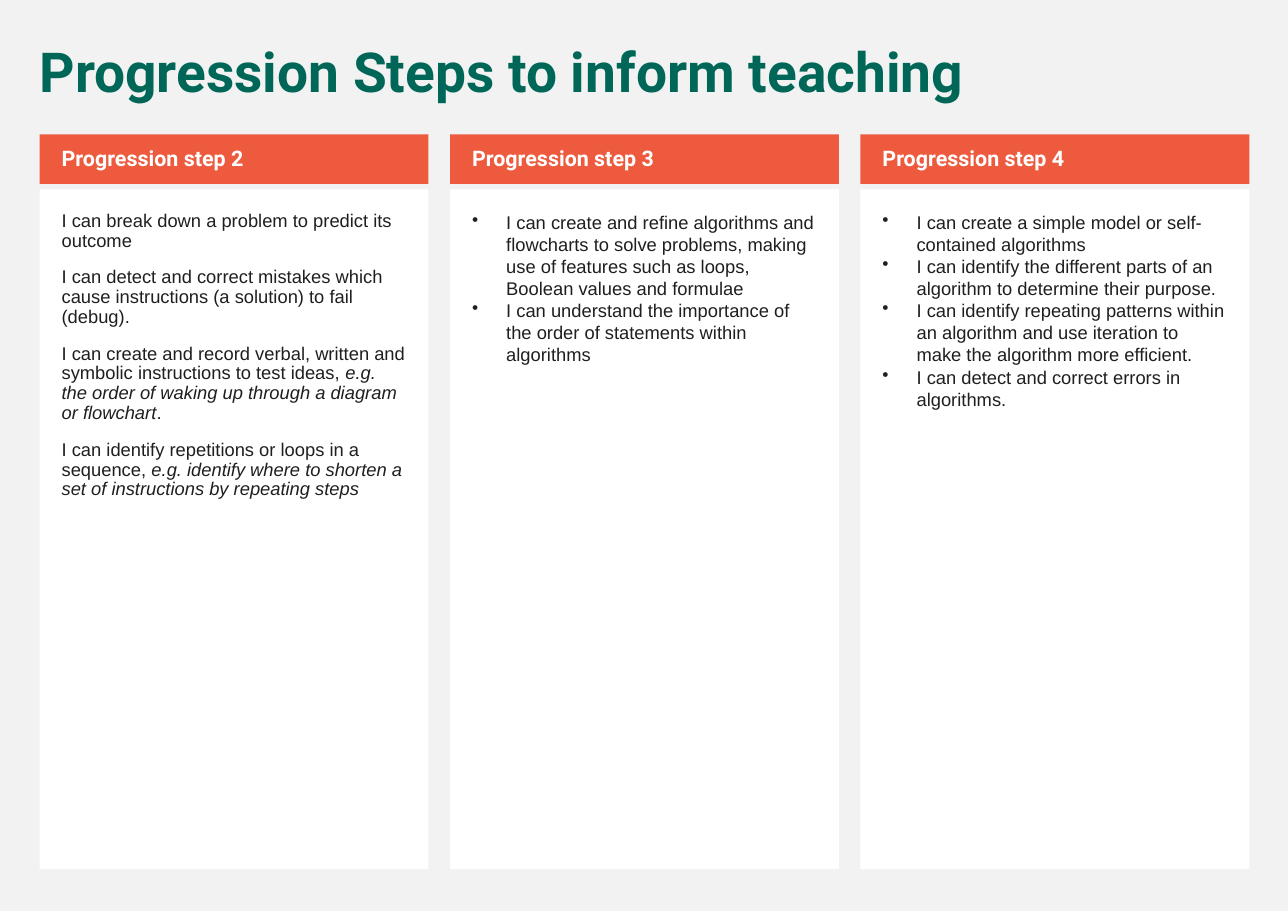
from pptx import Presentation
from pptx.dml.color import RGBColor
from pptx.enum.shapes import MSO_SHAPE as Shape
from pptx.enum.text import MSO_ANCHOR as Anchor, PP_ALIGN as Align
from pptx.oxml.ns import qn
from pptx.util import Inches, Pt
from lxml.etree import SubElement

GREEN, ORANGE, WHITE, DARK, GREY = "006758", "ED5A3E", "FFFFFF", "1F1F1F", "F2F2F2"
FIRST_LEFT, LAST_LEFT, COLUMN_WIDTH = 0.36, 7.81, 3.53

# Each statement is a list of runs; every second run is italic.
COLUMNS = [
    ("Progression step 2", False, [
        ["I can break down a problem to predict its outcome"],
        ["I can detect and correct mistakes which cause instructions (a solution) to fail (debug)."],
        ["I can create and record verbal, written and symbolic instructions to test ideas, ",
         "e.g. the order of waking up through a diagram or flowchart", "."],
        ["I can identify repetitions or loops in a sequence, ",
         "e.g. identify where to shorten a set of instructions by repeating steps"],
    ]),
    ("Progression step 3", True, [
        ["I can create and refine algorithms and flowcharts to solve problems, "
         "making use of features such as loops, Boolean values and formulae"],
        ["I can understand the importance of the order of statements within algorithms"],
    ]),
    ("Progression step 4", True, [
        ["I can create a simple model or self-contained algorithms"],
        ["I can identify the different parts of an algorithm to determine their purpose."],
        ["I can identify repeating patterns within an algorithm and use iteration "
         "to make the algorithm more efficient."],
        ["I can detect and correct errors in algorithms."],
    ]),
]


def set_color(color_format, value):
    color_format.rgb = RGBColor.from_string(value)


def style_paragraph(paragraph, font_name, size, color, bold=False):
    paragraph.alignment = Align.LEFT
    font = paragraph.font
    font.name, font.size, font.bold = font_name, Pt(size), bold
    set_color(font.color, color)


def space_paragraph(paragraph):
    paragraph.line_spacing = 0.9
    paragraph.space_before = Pt(11)


def add_bullet(paragraph):
    properties = paragraph._p.get_or_add_pPr()
    properties.set("marL", str(Inches(0.31)))
    properties.set("indent", str(-Inches(0.31)))
    bullet = SubElement(properties, qn("a:buChar"))
    bullet.set("char", "•")
    # The bullet must come before the default run properties.
    properties.insert(0, bullet)


def add_panel(slide, left, top, height, fill, insets, anchor):
    """Add a plain rectangle and return its text frame."""
    shape = slide.shapes.add_shape(
        Shape.RECTANGLE, Inches(left), Inches(top), Inches(COLUMN_WIDTH), Inches(height))
    shape.shadow.inherit = False
    shape.fill.solid()
    set_color(shape.fill.fore_color, fill)
    shape.line.fill.background()
    frame = shape.text_frame
    frame.word_wrap = True
    frame.vertical_anchor = anchor
    (frame.margin_left, frame.margin_top,
     frame.margin_right, frame.margin_bottom) = map(Inches, insets)
    return frame


def add_heading(slide, left, text):
    frame = add_panel(slide, left, 1.22, 0.45, ORANGE, (0.2, 0.05, 0.1, 0.05), Anchor.MIDDLE)
    paragraph = frame.paragraphs[0]
    paragraph.text = text
    style_paragraph(paragraph, "Roboto", 14, WHITE, bold=True)
    space_paragraph(paragraph)


def add_statements(slide, left, statements, bulleted):
    frame = add_panel(slide, left, 1.72, 6.17, WHITE, (0.2, 0.2, 0.2, 0.2), Anchor.TOP)
    for index, runs in enumerate(statements):
        paragraph = frame.add_paragraph() if index else frame.paragraphs[0]
        style_paragraph(paragraph, "Arial", 12, DARK)
        if bulleted:
            add_bullet(paragraph)
        else:
            space_paragraph(paragraph)
        for position, text in enumerate(runs):
            run = paragraph.add_run()
            run.text = text
            if position % 2:
                run.font.italic = True


def add_title(slide, text):
    box = slide.shapes.add_textbox(Inches(0.26), Inches(0.36), Inches(11.08), Inches(0.65))
    box.text_frame.word_wrap = True
    paragraph = box.text_frame.paragraphs[0]
    paragraph.text = text
    style_paragraph(paragraph, "Roboto", 36, GREEN, bold=True)
    space_paragraph(paragraph)


def main():
    presentation = Presentation()
    presentation.slide_width, presentation.slide_height = Inches(11.69), Inches(8.27)
    slide = presentation.slides.add_slide(presentation.slide_layouts[6])
    slide.background.fill.solid()
    set_color(slide.background.fill.fore_color, GREY)

    add_title(slide, "Progression Steps to inform teaching")
    pitch = (LAST_LEFT - FIRST_LEFT) / (len(COLUMNS) - 1)
    for index, (heading, bulleted, statements) in enumerate(COLUMNS):
        left = FIRST_LEFT + index * pitch
        add_statements(slide, left, statements, bulleted)
        add_heading(slide, left, heading)
    presentation.save("out.pptx")


if __name__ == "__main__":
    main()
